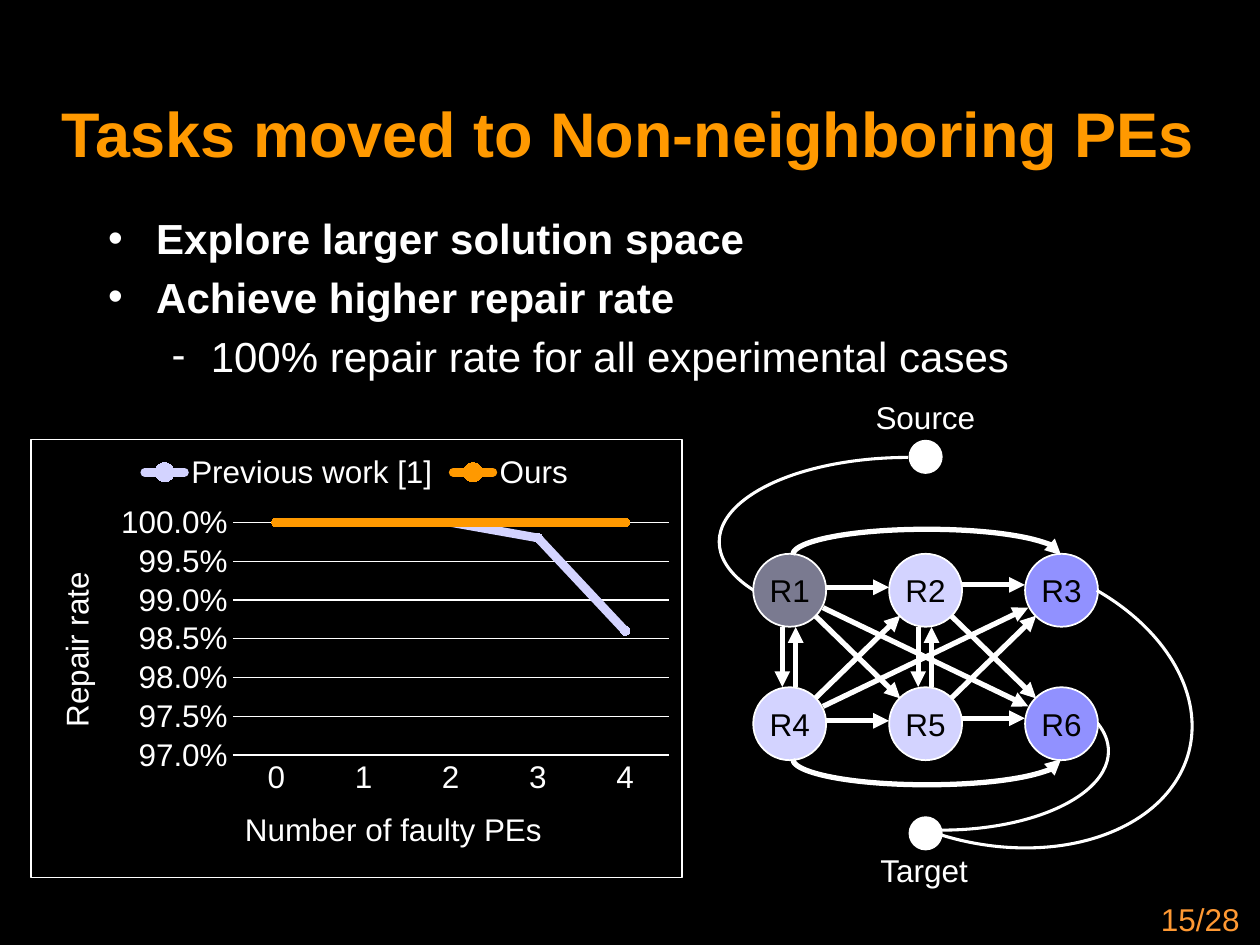
from lxml.etree import SubElement
from pptx import Presentation
from pptx.chart.data import CategoryChartData
from pptx.dml.color import RGBColor
from pptx.enum.chart import XL_CHART_TYPE, XL_LEGEND_POSITION, XL_MARKER_STYLE, XL_TICK_MARK
from pptx.enum.shapes import MSO_CONNECTOR, MSO_SHAPE
from pptx.enum.text import MSO_ANCHOR, PP_ALIGN
from pptx.oxml import parse_xml
from pptx.oxml.ns import nsdecls, qn
from pptx.util import Cm, Pt

FONT, WHITE, BLACK, ORANGE = "Arial", "FFFFFF", "000000", "FF9900"
DARK, LIGHT, VIOLET = "7A7A90", "D3D3FF", "9191FF"

TITLE = "Tasks moved to Non-neighboring PEs"
# text, bullet, bold, left indent, hanging indent
BULLETS = [
    ("Explore larger solution space", "•", True, 0.97, 0.97),
    ("Achieve higher repair rate", "•", True, 0.97, 0.97),
    ("100% repair rate for all experimental cases", "-", False, 2.07, 0.79),
]
CATEGORIES = ["0", "1", "2", "3", "4"]
SERIES = [
    ("Previous work [1]", (1, 1, 1, 0.998, 0.986), LIGHT),
    ("Ours", (1, 1, 1, 1, 1), ORANGE),
]

# Router grid: name -> (column, row, fill)
ROUTERS = {
    "R1": (0, 0, DARK), "R2": (1, 0, LIGHT), "R3": (2, 0, VIOLET),
    "R4": (0, 1, LIGHT), "R5": (1, 1, LIGHT), "R6": (2, 1, VIOLET),
}
GRID_X, GRID_Y, STEP_X, STEP_Y, ROUTER_D = 15.92, 11.9, 2.74, 2.69, 1.47
# (columns, rows) spanned -> distance from router centre to arrow end
TRIM = {(1, 0): (0.74, 0), (0, 1): (0, 0.74), (1, 1): (0.51, 0.51), (2, 1): (0.67, 0.35)}
# from, to, sideways shift (x, y)
ARROWS = [
    ("R1", "R2", 0, -0.06), ("R2", "R3", 0, -0.11),
    ("R4", "R5", 0, -0.06), ("R5", "R6", 0, -0.11),
    ("R1", "R4", -0.15, 0), ("R4", "R1", 0.12, 0),
    ("R2", "R5", -0.15, 0), ("R5", "R2", 0.12, 0),
    ("R1", "R5", 0, 0), ("R4", "R2", 0, 0), ("R2", "R6", 0, 0), ("R5", "R3", 0, 0),
    ("R1", "R6", 0, 0), ("R4", "R3", 0, 0),
]
# box, rotation, start and end angle in degrees, line width, arrowhead
SOURCE_ARC = ((16.61, 7.11, 3.4, 7.62), 270, 252.16, 0, 1.75, None)
ARCS = [
    ((17.4, 11.79, 3.18, 6.71), 90, 260.03, 2.56, 1.75, None),
    ((15.82, 11.23, 8.28, 5.77), 14.5, 299.66, 96.59, 1.75, None),
    ((15.98, 10.67, 5.41, 1.04), 0, 180.1, 0, 3, "tailEnd"),
    ((15.98, 14.78, 5.41, 1.04), 180, 180.1, 0, 3, "headEnd"),
]
# label, label box, top of the dot
ENDPOINTS = [
    ("Source", (17.4, 7.9, 2.54, 1.02), 8.92),
    ("Target", (17.5, 17.04, 2.29, 1.02), 16.51),
]
DOT_D = 0.58

prs = Presentation()
prs.slide_width, prs.slide_height = Cm(25.4), Cm(19.05)
slide = prs.slides.add_slide(prs.slide_layouts[6])


def rgb(value):
    return RGBColor.from_string(value)


def set_font(font, size=18, color=WHITE, bold=False):
    for name, value in {"name": FONT, "size": Pt(size), "bold": bold}.items():
        setattr(font, name, value)
    font.color.rgb = rgb(color)


def set_line(line, width, color=WHITE):
    line.color.rgb = rgb(color)
    line.width = Pt(width)


def add_head(s, end):
    SubElement(s.line._get_or_add_ln(), qn(f"a:{end}"), type="triangle")


def add_text(box, text, size=18, color=WHITE, bold=False, align=PP_ALIGN.LEFT, wrap=True):
    tf = slide.shapes.add_textbox(*map(Cm, box)).text_frame
    tf.word_wrap = wrap
    p = tf.paragraphs[0]
    p.alignment = align
    r = p.add_run()
    r.text = text
    set_font(r.font, size, color, bold)
    return tf


def add_bullets(box):
    tf = slide.shapes.add_textbox(*map(Cm, box)).text_frame
    tf.word_wrap = True
    for i, (text, bullet, bold, left, hanging) in enumerate(BULLETS):
        p = tf.paragraphs[0] if i == 0 else tf.add_paragraph()
        p.space_before = Pt(4.8)
        pPr = p._p.get_or_add_pPr()
        pPr.set("marL", str(Cm(left)))
        pPr.set("indent", str(-Cm(hanging)))
        SubElement(pPr, qn("a:buFont"), typeface=FONT)
        SubElement(pPr, qn("a:buChar"), char=bullet)
        r = p.add_run()
        r.text = text
        set_font(r.font, 24, bold=bold)


def add_circle(cx, cy, d, fill, line_width):
    s = slide.shapes.add_shape(MSO_SHAPE.OVAL, Cm(cx - d / 2), Cm(cy - d / 2), Cm(d), Cm(d))
    s.shadow.inherit = False
    s.fill.solid()
    s.fill.fore_color.rgb = rgb(fill)
    set_line(s.line, line_width)
    return s


def add_arc(box, rotation, start, end, width, head):
    s = slide.shapes.add_shape(MSO_SHAPE.ARC, *map(Cm, box))
    s.shadow.inherit = False
    s.rotation = rotation
    for i, angle in enumerate((start, end)):
        s.adjustments[i] = angle * 0.6  # 60000 units per degree, scaled by 100000
    s.fill.background()
    set_line(s.line, width)
    if head:
        add_head(s, head)


def center(name):
    col, row, _ = ROUTERS[name]
    return GRID_X + col * STEP_X, GRID_Y + row * STEP_Y


def add_router(name):
    s = add_circle(*center(name), ROUTER_D, ROUTERS[name][2], 1)
    tf = s.text_frame
    for key, value in {"word_wrap": False, "vertical_anchor": MSO_ANCHOR.MIDDLE, "margin_left": 0,
                       "margin_right": 0, "margin_top": 0, "margin_bottom": 0}.items():
        setattr(tf, key, value)
    p = tf.paragraphs[0]
    p.alignment = PP_ALIGN.CENTER
    r = p.add_run()
    r.text = name
    set_font(r.font, color=BLACK)


def add_arrow(start, end, shift_x, shift_y):
    (x1, y1), (x2, y2) = center(start), center(end)
    cols, rows = (ROUTERS[end][i] - ROUTERS[start][i] for i in (0, 1))
    trim_x, trim_y = TRIM[abs(cols), abs(rows)]
    dx, dy = (trim_x if cols > 0 else -trim_x), (trim_y if rows > 0 else -trim_y)
    ends = (x1 + dx + shift_x, y1 + dy + shift_y, x2 - dx + shift_x, y2 - dy + shift_y)
    s = slide.shapes.add_connector(MSO_CONNECTOR.STRAIGHT, *map(Cm, ends))
    SubElement(s._element.spPr, qn("a:effectLst"))
    set_line(s.line, 3)
    add_head(s, "tailEnd")


def place(element, x, y, w=None, h=None):
    """Give a chart part a manual layout in fractions of the chart."""
    old = element.find(qn("c:layout"))
    if old is not None:
        element.remove(old)
    target = '<c:layoutTarget val="inner"/>' if w else ""
    size = f'<c:w val="{w}"/><c:h val="{h}"/>' if w else ""
    layout = parse_xml(
        f'<c:layout {nsdecls("c")}><c:manualLayout>{target}<c:xMode val="edge"/>'
        f'<c:yMode val="edge"/><c:x val="{x}"/><c:y val="{y}"/>{size}</c:manualLayout></c:layout>')
    text = element.find(qn("c:tx"))
    element.insert(0 if text is None else 1, layout)


def add_repair_chart(box):
    data = CategoryChartData(number_format="0.0%")
    data.categories = CATEGORIES
    for name, values, _ in SERIES:
        data.add_series(name, values)
    chart = slide.shapes.add_chart(XL_CHART_TYPE.LINE_MARKERS, *map(Cm, box), data).chart
    set_font(chart.font)
    chart.has_title = False
    chart.has_legend = True
    chart.legend.position = XL_LEGEND_POSITION.TOP
    chart.legend.include_in_layout = False
    set_font(chart.legend.font)

    plot = chart.plots[0]
    plot.vary_by_categories = False
    for series, (_, _, color) in zip(plot.series, SERIES):
        series.smooth = False
        set_line(series.format.line, 5, color)
        series.format.line._get_or_add_ln().set("cap", "rnd")
        marker = series.marker
        marker.style, marker.size = XL_MARKER_STYLE.CIRCLE, 5
        marker.format.fill.solid()
        marker.format.fill.fore_color.rgb = rgb(color)
        set_line(marker.format.line, 0.75, color)

    x_axis, y_axis = chart.category_axis, chart.value_axis
    for axis, title, x, y in ((x_axis, "Number of faulty PEs", 0.32, 0.83),
                              (y_axis, "Repair rate", 0.03, 0.29)):
        axis.major_tick_mark = axis.minor_tick_mark = XL_TICK_MARK.NONE
        set_font(axis.tick_labels.font)
        axis.axis_title.text_frame.text = title
        set_font(axis.axis_title.text_frame.paragraphs[0].runs[0].font)
        place(axis.axis_title._element, x, y)
    set_line(x_axis.format.line, 0.75)
    y_axis.format.line.fill.background()
    for name, value in {"minimum_scale": 0.97, "maximum_scale": 1, "major_unit": 0.005}.items():
        setattr(y_axis, name, value)
    y_axis.tick_labels.number_format = "0.0%"
    y_axis.tick_labels.number_format_is_linked = False
    set_line(y_axis.major_gridlines.format.line, 0.75)

    space = chart._chartSpace
    place(space.chart.plotArea, 0.31, 0.19, 0.67, 0.53)
    space.chart.addnext(parse_xml(
        f'<c:spPr {nsdecls("c", "a")}><a:noFill/><a:ln w="{Pt(0.75)}"><a:solidFill>'
        f'<a:srgbClr val="{WHITE}"/></a:solidFill></a:ln></c:spPr>'))


slide.background.fill.solid()
slide.background.fill.fore_color.rgb = rgb(BLACK)
add_arc(*SOURCE_ARC)
add_bullets((1.93, 4.16, 21.59, 3.8))
add_text((0.13, 1.48, 25.07, 2.36), TITLE, 36, ORANGE, True,
         PP_ALIGN.CENTER).vertical_anchor = MSO_ANCHOR.MIDDLE
for router in ROUTERS:
    add_router(router)
for label, label_box, dot_top in ENDPOINTS:
    add_circle(GRID_X + STEP_X, dot_top + DOT_D / 2, DOT_D, WHITE, 3)
    add_text(label_box, label, wrap=False)
for arc in ARCS:
    add_arc(*arc)
for arrow in ARROWS:
    add_arrow(*arrow)
add_repair_chart((0.61, 8.84, 13.15, 8.87))
add_text((19.96, 18.01, 5.28, 1.02), "15/28", color="FF9933", align=PP_ALIGN.RIGHT)
prs.save("out.pptx")
